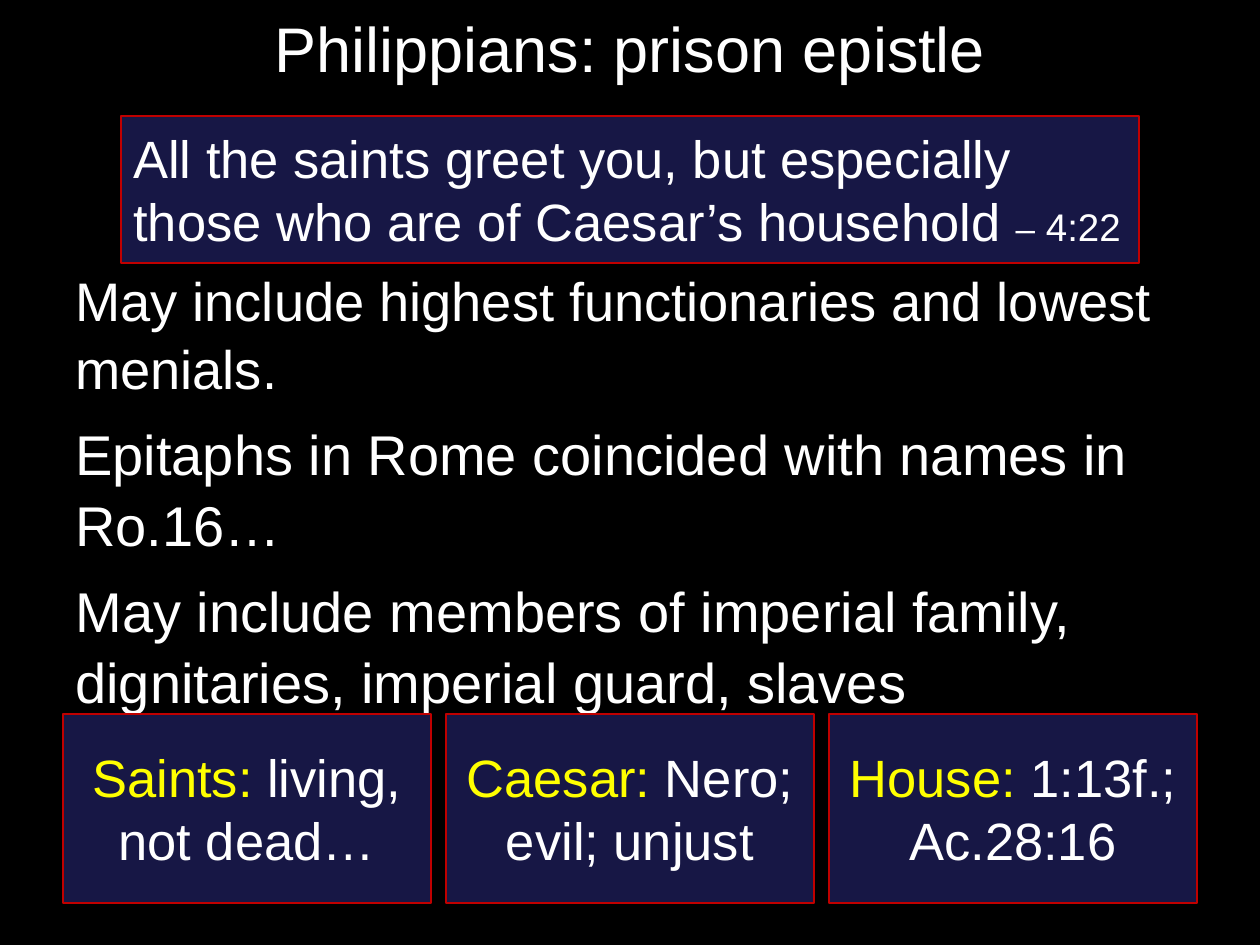
from dataclasses import dataclass

from pptx import Presentation
from pptx.dml.color import RGBColor
from pptx.enum.shapes import MSO_SHAPE
from pptx.enum.text import MSO_ANCHOR, PP_ALIGN
from pptx.util import Emu, Pt

EMU_PER_PX = 914400 / 126


@dataclass(frozen=True)
class Theme:
    font: str = "Arial"
    background: str = "000000"
    panel: str = "171745"
    border: str = "C00000"
    text: str = "FFFFFF"
    accent: str = "FFFF00"
    title_size: int = 36
    body_size: int = 32
    first_body_size: int = 31
    panel_size: int = 30
    dash_size: int = 20
    verse_size: int = 22


@dataclass(frozen=True)
class Box:
    left: int
    top: int
    width: int
    height: int


@dataclass(frozen=True)
class Card:
    label: str
    detail: str


THEME = Theme()
QUOTE_BOX = Box(121, 116, 1018, 147)
FIRST_CARD = Box(63, 714, 368, 189)
CARD_GAP = 15
CARDS = [
    Card("Saints:", " living, not dead…"),
    Card("Caesar:", " Nero; evil; unjust"),
    Card("House:", " 1:13f.; Ac.28:16"),
]
BODY = [
    ("May include highest functionaries and lowest menials.", THEME.first_body_size),
    ("Epitaphs in Rome coincided with names in Ro.16…", THEME.body_size),
    ("May include members of imperial family, dignitaries, imperial guard, slaves",
     THEME.body_size),
]


def px(length: int) -> Emu:
    return Emu(round(length * EMU_PER_PX))


def place(box: Box) -> tuple:
    return px(box.left), px(box.top), px(box.width), px(box.height)


def add_run(paragraph, text: str, *, size: int, color: str = THEME.text) -> None:
    run = paragraph.add_run()
    run.text = text
    run.font.name = THEME.font
    run.font.size = Pt(size)
    run.font.color.rgb = RGBColor.from_string(color)


def add_text_box(slide, box: Box, anchor: MSO_ANCHOR):
    frame = slide.shapes.add_textbox(*place(box)).text_frame
    frame.word_wrap = True
    frame.vertical_anchor = anchor
    return frame


def add_panel(slide, box: Box, alignment: PP_ALIGN):
    """Draw a bordered panel and return its empty paragraph."""
    shape = slide.shapes.add_shape(MSO_SHAPE.RECTANGLE, *place(box))
    shape.shadow.inherit = False
    shape.fill.solid()
    shape.fill.fore_color.rgb = RGBColor.from_string(THEME.panel)
    shape.line.color.rgb = RGBColor.from_string(THEME.border)
    shape.line.width = Pt(1)
    frame = shape.text_frame
    frame.word_wrap = True
    frame.vertical_anchor = MSO_ANCHOR.MIDDLE
    paragraph = frame.paragraphs[0]
    paragraph.alignment = alignment
    return paragraph


def add_title(slide) -> None:
    frame = add_text_box(slide, Box(63, 0, 1134, 95), MSO_ANCHOR.MIDDLE)
    paragraph = frame.paragraphs[0]
    paragraph.alignment = PP_ALIGN.CENTER
    add_run(paragraph, "Philippians: prison epistle", size=THEME.title_size)


def add_body(slide) -> None:
    frame = add_text_box(slide, Box(63, 264, 1134, 440), MSO_ANCHOR.TOP)
    frame.margin_top = 0
    for index, (text, size) in enumerate(BODY):
        paragraph = frame.add_paragraph() if index else frame.paragraphs[0]
        paragraph.line_spacing = 1.05
        paragraph.space_before = Pt(6 if index else 0)
        paragraph.space_after = Pt(3)
        add_run(paragraph, text, size=size)


def add_quote(slide) -> None:
    paragraph = add_panel(slide, QUOTE_BOX, PP_ALIGN.LEFT)
    add_run(paragraph,
            "All the saints greet you, but especially those who are of Caesar’s household ",
            size=THEME.panel_size)
    add_run(paragraph, "–", size=THEME.dash_size)
    add_run(paragraph, " 4:22", size=THEME.verse_size)


def add_card(slide, card: Card, index: int) -> None:
    left = FIRST_CARD.left + index * (FIRST_CARD.width + CARD_GAP)
    box = Box(left, FIRST_CARD.top, FIRST_CARD.width, FIRST_CARD.height)
    paragraph = add_panel(slide, box, PP_ALIGN.CENTER)
    add_run(paragraph, card.label, size=THEME.panel_size, color=THEME.accent)
    add_run(paragraph, card.detail, size=THEME.panel_size)


def main() -> None:
    # Slide and background
    presentation = Presentation()
    presentation.slide_width, presentation.slide_height = px(1260), px(945)
    slide = presentation.slides.add_slide(presentation.slide_layouts[6])
    slide.background.fill.solid()
    slide.background.fill.fore_color.rgb = RGBColor.from_string(THEME.background)

    # Title, main points and quotation
    add_title(slide)
    add_body(slide)
    add_quote(slide)

    # Row of cards
    for index, card in enumerate(CARDS):
        add_card(slide, card, index)

    presentation.save("out.pptx")


if __name__ == "__main__":
    main()
